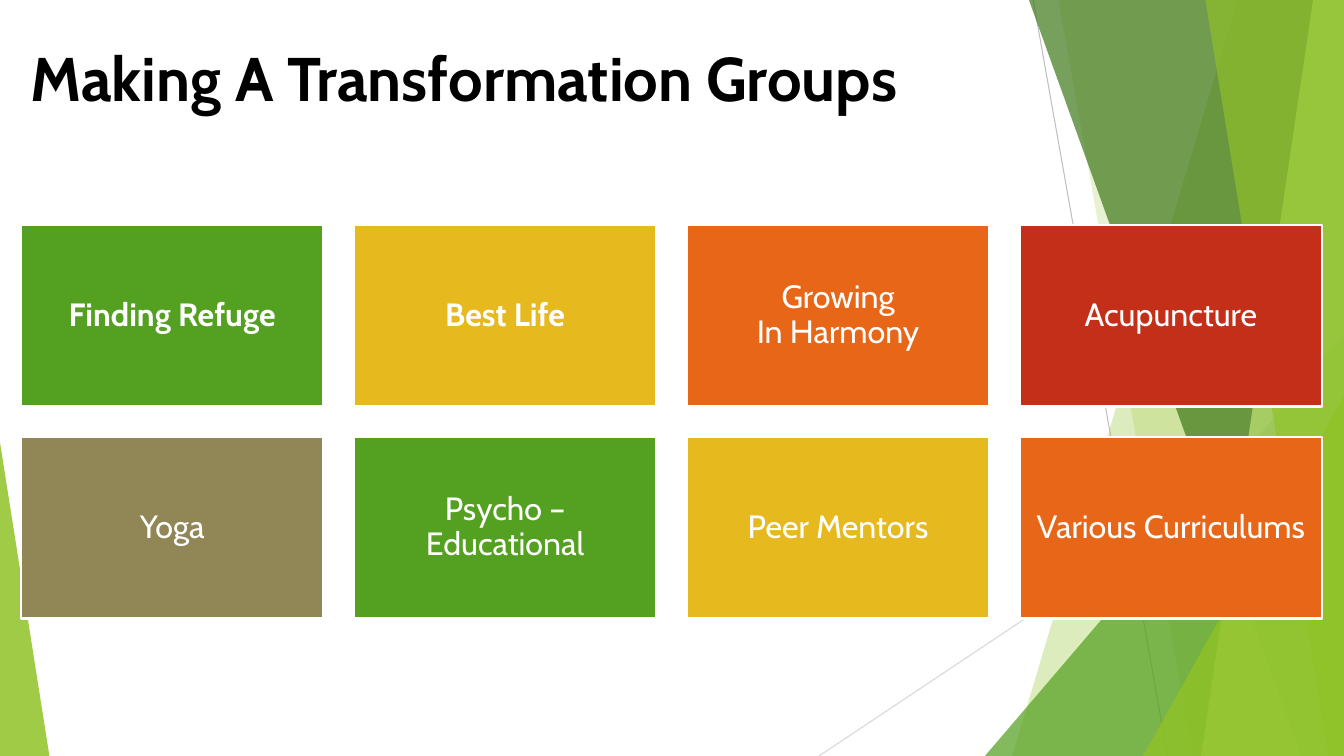
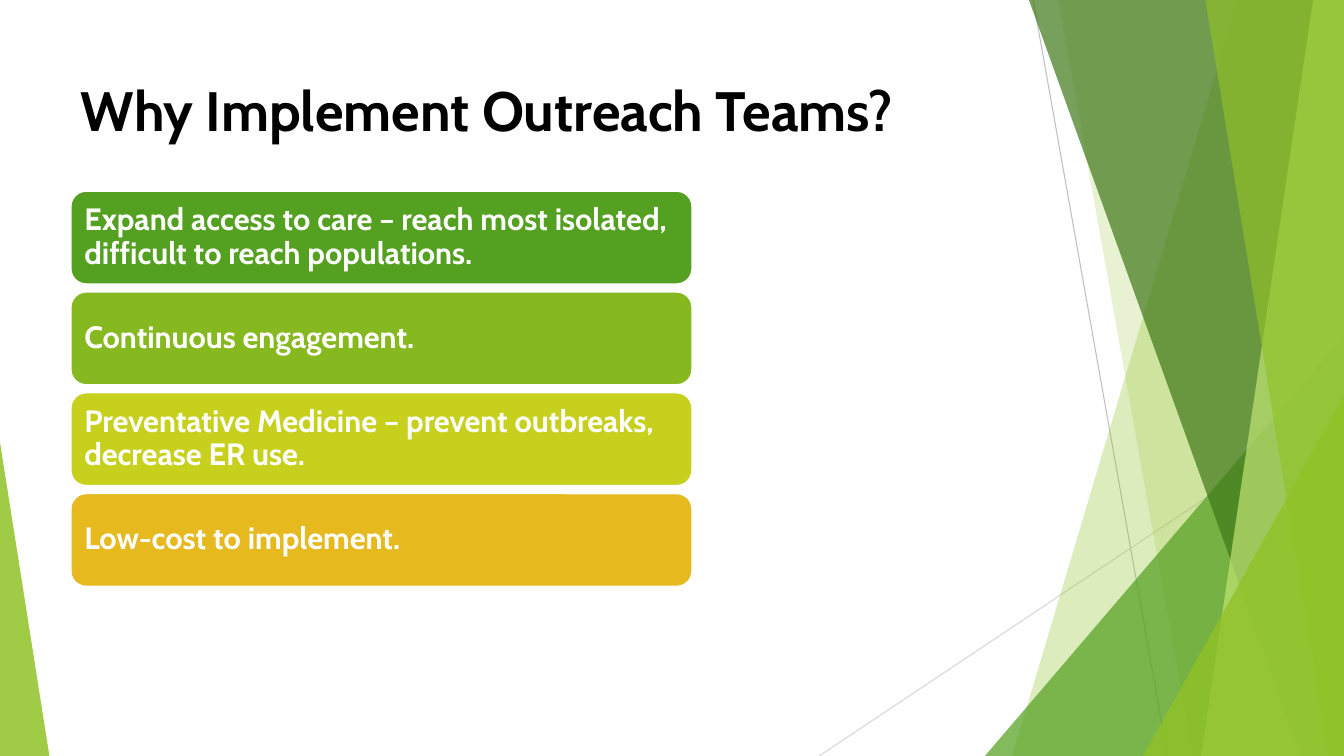
from lxml import etree
from pptx import Presentation
from pptx.dml import color as dml
from pptx.enum import shapes, text
from pptx.oxml import ns
from pptx.util import Pt

WHITE, BLACK = "FFFFFF", "000000"
GREEN, LIME, LEAF = "54A021", "90C226", "86B820"
CHARTREUSE, GOLD, ORANGE = "C7D01D", "E6B91E", "E76618"
RED, OLIVE = "C42F1A", "918655"
FOREST, PALE = "3F7819", "C0E474"
WIDTH, HEIGHT = 960, 540

RAYS = [("BFBFBF", 738, 0, 834, HEIGHT), ("D9D9D9", WIDTH, 290, 585, HEIGHT)]
BANDS = [
    (LIME, 30, 884, 723),
    (LIME, 20, 756, 852),
    (GREEN, 72, (703.5, 240, 256.5, 300), 1),
    (FOREST, 70, 735, 929.5),
    (PALE, 70, 938, 858),
    (LIME, 65, 861, 949),
    (LIME, 80, (816.5, 283, 143.5, 257), 1),
    (LIME, 85, (0, 316, 35.3, 224), 0),
]
GROUPS = [
    ("Finding Refuge", GREEN, True),
    ("Best Life", GOLD, True),
    ("Growing\nIn Harmony", ORANGE, False),
    ("Acupuncture", RED, False),
    ("Yoga", OLIVE, False),
    ("Psycho – Educational", GREEN, False),
    ("Peer Mentors", GOLD, False),
    ("Various Curriculums", ORANGE, False),
]
REASONS = [
    ("Expand access to care – reach most isolated, difficult to reach populations.", GREEN),
    ("Continuous engagement.", LEAF),
    ("Preventative Medicine – prevent outbreaks, decrease ER use.", CHARTREUSE),
    ("Low-cost to implement.", GOLD),
]


def rgb(value):
    return dml.RGBColor.from_string(value)


class Deck:
    """Hold the shared style and the slide being built."""

    font = "Cabin"

    def __init__(self):
        self.presentation = Presentation()
        self.presentation.slide_width = Pt(WIDTH)
        self.presentation.slide_height = Pt(HEIGHT)
        self.layout = self.presentation.slide_layouts[5]
        self.slide = None

    def add_slide(self, title, box, size):
        first = self.slide is None
        self.slide = self.presentation.slides.add_slide(self.layout)
        if first:
            self.add_backdrop()
        shape = self.slide.shapes.title
        shape.left, shape.top, shape.width, shape.height = map(Pt, box)
        self.add_text(shape, title, size, BLACK, True, anchor=text.MSO_ANCHOR.TOP)

    def add_backdrop(self):
        decorations = [self.add_ray(*ray) for ray in RAYS]
        decorations += [self.add_band(*band) for band in BANDS]
        for number, shape in enumerate(decorations, 101):
            shape.element.xpath(".//p:cNvPr")[0].set("id", str(number))
            self.layout.shapes.element.append(shape.element)

    def add_ray(self, line_color, *ends):
        ray = self.slide.shapes.add_connector(
            shapes.MSO_CONNECTOR.STRAIGHT, *map(Pt, ends))
        ray.line.color.rgb = rgb(line_color)
        ray.line.width = Pt(0.75)
        properties = ray.element.xpath("./p:spPr")[0]
        etree.SubElement(properties, ns.qn("a:effectLst"))
        return ray

    def add_band(self, fill, opacity, place, slant):
        if isinstance(place, tuple):
            band = self.slide.shapes.add_shape(
                shapes.MSO_SHAPE.ISOSCELES_TRIANGLE, *map(Pt, place))
            band.adjustments[0] = slant
        else:
            outline = self.slide.shapes.build_freeform(Pt(place), 0)
            corners = [(WIDTH, 0), (WIDTH, HEIGHT), (slant, HEIGHT)]
            outline.add_line_segments([(Pt(x), Pt(y)) for x, y in corners])
            band = outline.convert_to_shape()
        self.paint(band, fill)
        band.line.fill.background()
        fill_color = band.element.xpath("./p:spPr/a:solidFill/a:srgbClr")[0]
        etree.SubElement(fill_color, ns.qn("a:alpha")).set("val", str(opacity * 1000))
        return band

    def add_box(self, kind, box, fill, words, size, bold, align, inset):
        shape = self.slide.shapes.add_shape(kind, *map(Pt, box))
        self.paint(shape, fill)
        shape.line.color.rgb = rgb(WHITE)
        shape.line.width = Pt(1.5)
        frame = shape.text_frame
        frame.margin_left = frame.margin_right = Pt(inset)
        frame.margin_top = frame.margin_bottom = Pt(inset)
        self.add_text(shape, words, size, WHITE, bold, align)

    def paint(self, shape, fill):
        shape.shadow.inherit = False
        shape.fill.solid()
        shape.fill.fore_color.rgb = rgb(fill)

    def add_text(self, shape, words, size, text_color, bold,
                 align=text.PP_ALIGN.LEFT, anchor=text.MSO_ANCHOR.MIDDLE):
        frame = shape.text_frame
        frame.word_wrap = True
        frame.auto_size = text.MSO_AUTO_SIZE.NONE
        frame.vertical_anchor = anchor
        paragraph = frame.paragraphs[0]
        paragraph.alignment = align
        paragraph.line_spacing = 0.9 if anchor == text.MSO_ANCHOR.MIDDLE else 1.0
        for index, line in enumerate(words.split("\n")):
            if index:
                paragraph.add_line_break()
            run = paragraph.add_run()
            run.text = line
            run.font.name = self.font
            run.font.size = Pt(size)
            run.font.bold = bold
            run.font.color.rgb = rgb(text_color)


def build_groups(deck):
    deck.add_slide("Making A Transformation Groups", (14.4, 25.2, 779, 143), 44)
    width, height, gap = 216, 129.6, 21.8
    for index, (words, fill, bold) in enumerate(GROUPS):
        row, column = divmod(index, 4)
        box = (15.1 + column * (width + gap), 160.8 + row * (height + gap), width, height)
        deck.add_box(shapes.MSO_SHAPE.RECTANGLE, box, fill, words, 23, bold,
                     text.PP_ALIGN.CENTER, 7.2)


def build_reasons(deck):
    deck.add_slide("Why Implement Outreach Teams?", (50.4, 50.4, 653, 66), 39.6)
    for index, (words, fill) in enumerate(REASONS):
        box = (50.4, 136.3 + index * 72, 444.2, 66.8)
        deck.add_box(shapes.MSO_SHAPE.ROUNDED_RECTANGLE, box, fill, words, 22, True,
                     text.PP_ALIGN.LEFT, 6.6)


def main():
    deck = Deck()
    build_groups(deck)
    build_reasons(deck)
    deck.presentation.save("out.pptx")


if __name__ == "__main__":
    main()
